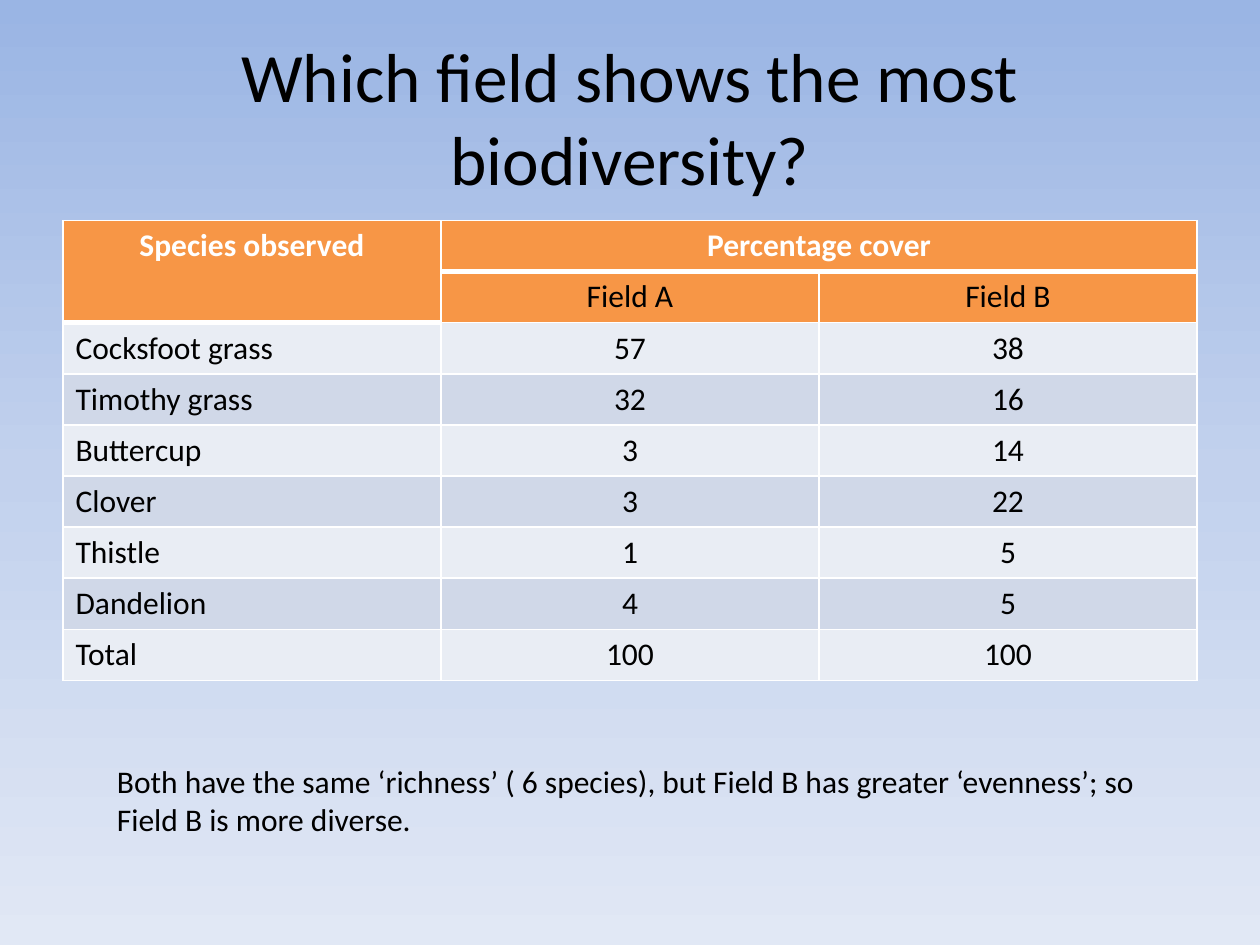
from lxml.etree import SubElement
from pptx import Presentation
from pptx.dml.color import RGBColor
from pptx.enum.text import MSO_ANCHOR, MSO_AUTO_SIZE, PP_ALIGN
from pptx.oxml.ns import qn
from pptx.util import Inches, Pt

BLACK, WHITE, ORANGE = "000000", "FFFFFF", "F79646"
BANDS = ["E9EDF4", "D0D8E8"]
BACKGROUND_STOPS = [(0, "9AB5E4"), (50, "C2D1ED"), (100, "E1E8F5")]
ROWS = [
    ("Species observed", "Percentage cover", ""),
    ("", "Field A", "Field B"),
    ("Cocksfoot grass", "57", "38"),
    ("Timothy grass", "32", "16"),
    ("Buttercup", "3", "14"),
    ("Clover", "3", "22"),
    ("Thistle", "1", "5"),
    ("Dandelion", "4", "5"),
    ("Total", "100", "100"),
]


def rgb(value):
    return RGBColor.from_string(value)


def style_para(para, size, color=BLACK, bold=False, align=PP_ALIGN.LEFT):
    para.alignment = align
    font = para.font
    font.name, font.size, font.bold = "Calibri", Pt(size), bold
    font.color.rgb = rgb(color)


def paint_background(page):
    fill = page.background.fill
    fill.gradient()
    gradient = page.background._cSld.find(".//" + qn("a:gradFill"))
    stops = gradient.find(qn("a:gsLst"))
    for stop in list(stops):
        stops.remove(stop)
    for percent, color in BACKGROUND_STOPS:
        stop = SubElement(stops, qn("a:gs"), pos=str(percent * 1000))
        SubElement(stop, qn("a:srgbClr"), val=color)
    fill.gradient_angle = 270


def add_title(page, left, top, width, height):
    title = page.shapes.title
    title.left, title.top, title.width, title.height = left, top, width, height
    frame = title.text_frame
    frame.text = "Which field shows the most biodiversity?"
    frame.word_wrap = True
    frame.auto_size = MSO_AUTO_SIZE.NONE
    frame.vertical_anchor = MSO_ANCHOR.MIDDLE
    style_para(frame.paragraphs[0], 39.6, align=PP_ALIGN.CENTER)


def set_borders(cell, widths):
    """Draw white borders; widths maps L, R, T and B to points."""
    properties = cell._tc.get_or_add_tcPr()
    for side, points in widths.items():
        line = SubElement(properties, qn(f"a:ln{side}"), w=str(Pt(points)))
        fill = SubElement(line, qn("a:solidFill"))
        SubElement(fill, qn("a:srgbClr"), val=WHITE)


def add_cover_table(page, left, top, width, height):
    columns = len(ROWS[0])
    table = page.shapes.add_table(len(ROWS), columns, left, top, width, height).table
    for column in table.columns:
        column.width = width // columns
    for row in table.rows:
        row.height = height // len(ROWS)
    table.cell(0, 0).merge(table.cell(1, 0))
    table.cell(0, 1).merge(table.cell(0, 2))

    for r, texts in enumerate(ROWS):
        for c, text in enumerate(texts):
            cell = table.cell(r, c)
            header_end = 1 if c == 0 else 0
            set_borders(cell, {
                "L": 1,
                "R": 1,
                "T": 3 if r == header_end + 1 else 1,
                "B": 3 if r == header_end or (r, c) == (0, 0) else 1,
            })
            cell.fill.solid()
            cell.fill.fore_color.rgb = rgb(ORANGE if r < 2 else BANDS[r % 2])
            if text:
                cell.text = text
                centred = r < 2 or c > 0
                style_para(cell.text_frame.paragraphs[0], 18,
                           WHITE if r == 0 else BLACK, r == 0,
                           PP_ALIGN.CENTER if centred else PP_ALIGN.LEFT)


def add_conclusion(page, left, top, width, height):
    frame = page.shapes.add_textbox(left, top, width, height).text_frame
    frame.word_wrap = True
    frame.auto_size = MSO_AUTO_SIZE.SHAPE_TO_FIT_TEXT
    frame.text = ("Both have the same ‘richness’ ( 6 species), but Field B has "
                  "greater ‘evenness’; so Field B is more diverse.")
    style_para(frame.paragraphs[0], 18)


def main():
    deck = Presentation()
    deck.slide_width, deck.slide_height = Inches(10), Inches(7.5)
    page = deck.slides.add_slide(deck.slide_layouts[5])
    paint_background(page)
    add_title(page, Inches(0.5), Inches(0.3), Inches(9), Inches(1.25))
    add_cover_table(page, Inches(0.5), Inches(1.75), Inches(9), Inches(3.65))
    add_conclusion(page, Inches(0.83), Inches(6), Inches(8.67), Inches(0.71))
    deck.save("out.pptx")


if __name__ == "__main__":
    main()
